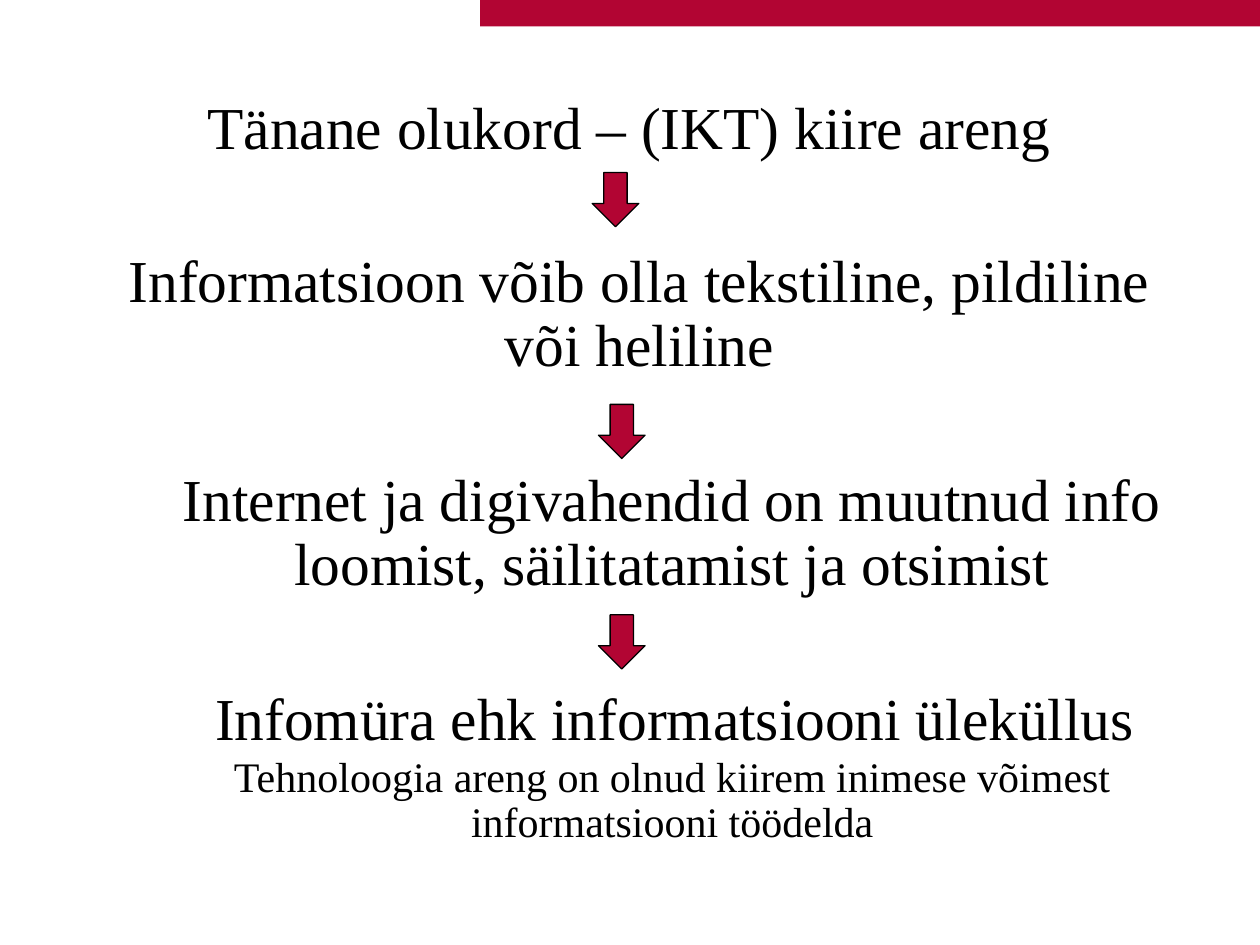
import pptx
import pptx.util
import pptx.dml.color
import pptx.enum.shapes
import pptx.enum.text

HUES = {"red": "B20533", "black": "000000", "white": "FFFFFF"}
FORM = pptx.enum.shapes.MSO_SHAPE

deck = pptx.Presentation()
deck.slide_width = pptx.util.Inches(10)
deck.slide_height = pptx.util.Inches(7.5)
col = deck.slide_width / 100
row = deck.slide_height / 75
slide = deck.slides.add_slide(deck.slide_layouts[6])


def draw(form, left, top, width, height, fill, line=None):
    """Add a filled shape placed in columns and rows of the grid."""
    shape = slide.shapes.add_shape(
        form, int(left * col), int(top * row), int(width * col), int(height * row))
    shape.shadow.inherit = False
    shape.fill.solid()
    shape.fill.fore_color.rgb = pptx.dml.color.RGBColor.from_string(HUES[fill])
    if line:
        shape.line.color.rgb = pptx.dml.color.RGBColor.from_string(HUES[line])
        shape.line.width = pptx.util.Pt(0.75)
    else:
        shape.line.fill.background()
    return shape


def write(shape, text, size):
    frame = shape.text_frame
    frame.word_wrap = True
    frame.vertical_anchor = pptx.enum.text.MSO_ANCHOR.TOP
    frame.text = text
    para = frame.paragraphs[0]
    para.alignment = pptx.enum.text.PP_ALIGN.CENTER
    para.line_spacing = 0.9
    font = para.runs[0].font
    font.name = "Times New Roman"
    font.size = pptx.util.Pt(size)
    font.color.rgb = pptx.dml.color.RGBColor.from_string(HUES["black"])


draw(FORM.RECTANGLE, 38.1, 0, 61.9, 2.1, "red")

# Opening statements: left, top, width, height, text
steps = [
    (3.3, 7.3, 93.3, 6.9, "Tänane olukord – (IKT) kiire areng"),
    (5.8, 19.4, 89.9, 11.4,
     "Informatsioon võib olla tekstiline, pildiline või heliline"),
    (8.4, 36.8, 89.9, 15.7,
     "Internet ja digivahendid on muutnud info loomist, säilitatamist ja otsimist"),
]
for left, top, width, height, text in steps:
    box = slide.shapes.add_textbox(
        int(left * col), int(top * row), int(width * col), int(height * row))
    write(box, text, 34)

# Outcome and its explanation on white panels
panels = [
    (8.6, 54.2, 7.1, "Infomüra ehk informatsiooni üleküllus", 34),
    (8.4, 59.5, 7, "Tehnoloogia areng on olnud kiirem inimese võimest "
     "informatsiooni töödelda", 24),
]
for left, top, height, text, size in panels:
    write(draw(FORM.RECTANGLE, left, top, 89.9, height, "white"), text, size)

for left, top in [(47, 13.7), (47.5, 32.1), (47.5, 48.8)]:
    draw(FORM.DOWN_ARROW, left, top, 3.7, 4.3, "red", "black")

deck.save("out.pptx")
